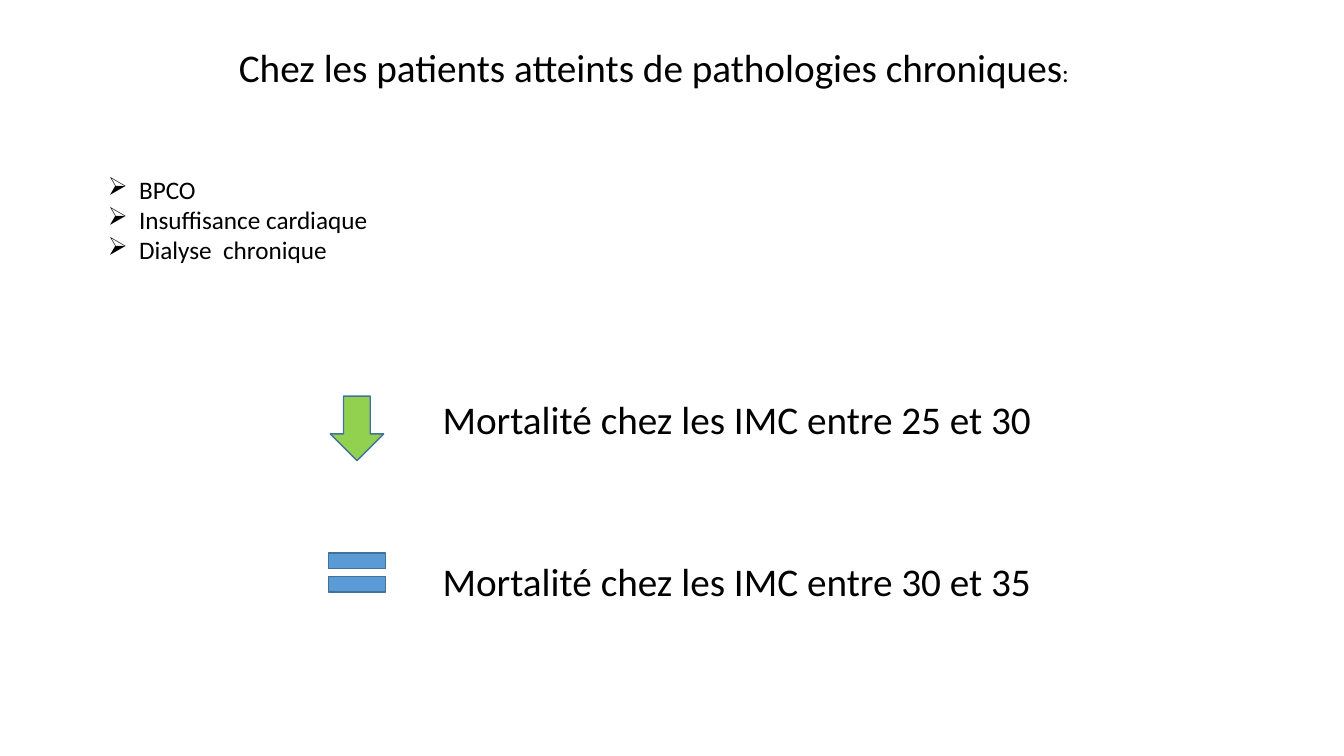
from lxml import etree
from pptx import Presentation
from pptx import util as u
from pptx.dml.color import RGBColor
from pptx.enum import shapes
from pptx.oxml.ns import qn

PX = 9144
FONT = "Calibri"
SYMBOL_CENTRE = 39
TEXT_OFFSET = 119


def px(n):
    """Turn px, at 100 to the inch, into EMU."""
    return u.Emu(round(n * PX))


def rgb(value):
    """Turn a hex string into a colour."""
    return RGBColor.from_string(value)


def add_text(s, x, y, w, h, lines, size):
    """Add a text box with one paragraph per line and return its frame."""
    tf = s.shapes.add_textbox(px(x), px(y), px(w), px(h)).text_frame
    tf.word_wrap = True
    tf.margin_left = tf.margin_right = tf.margin_top = tf.margin_bottom = px(5)
    tf.text = "\n".join(lines)
    for p in tf.paragraphs:
        p.font.name = FONT
        p.font.size = u.Pt(size)
        p.font.color.rgb = rgb("000000")
    return tf


def add_title(s, x, y, w, h):
    """Add the heading with its smaller colon."""
    tf = add_text(s, x, y, w, h, ["Chez les patients atteints de pathologies chroniques"], 28)
    r = tf.paragraphs[0].add_run()
    r.text = ":"
    r.font.size = u.Pt(18)


def add_diseases(s, x, y, w, h):
    """Add the list of diseases with arrow bullets."""
    tf = add_text(s, x, y, w, h, ["BPCO", "Insuffisance cardiaque", "Dialyse  chronique"], 18)
    for p in tf.paragraphs:
        pPr = p._p.get_or_add_pPr()
        pPr.set("marL", str(px(31)))
        pPr.set("indent", str(px(-31)))
        bullet = etree.Element(qn("a:buChar"), char="➢")
        defaults = pPr.find(qn("a:defRPr"))
        defaults.addprevious(bullet)


def add_finding(s, x, y, w, h, kind, size, centre_y, fill, label):
    """Add a row with a symbol centred in the left column and its label."""
    sw, sh = size
    sp = s.shapes.add_shape(kind, px(x + SYMBOL_CENTRE - sw / 2),
                            px(y + centre_y - sh / 2), px(sw), px(sh))
    sp.shadow.inherit = False
    sp.fill.solid()
    sp.fill.fore_color.rgb = rgb(fill)
    sp.line.color.rgb = rgb("42719B")
    sp.line.width = u.Pt(1)
    add_text(s, x + TEXT_OFFSET, y, w - TEXT_OFFSET, h, [label], 28)


def main():
    """Build and save the slide."""
    prs = Presentation()
    prs.slide_width, prs.slide_height = px(1333), px(750)
    s = prs.slides.add_slide(prs.slide_layouts[6])
    add_title(s, 232, 38, 940, 54)
    add_diseases(s, 102, 168, 364, 98)
    kinds = shapes.MSO_SHAPE
    add_finding(s, 315, 387, 802, 54, kinds.DOWN_ARROW, (53, 64), 38,
                "92D050", "Mortalité chez les IMC entre 25 et 30")
    add_finding(s, 315, 548, 776, 54, kinds.MATH_EQUAL, (77, 66), 20,
                "5B9BD5", "Mortalité chez les IMC entre 30 et 35")
    prs.save("out.pptx")


if __name__ == "__main__":
    main()
